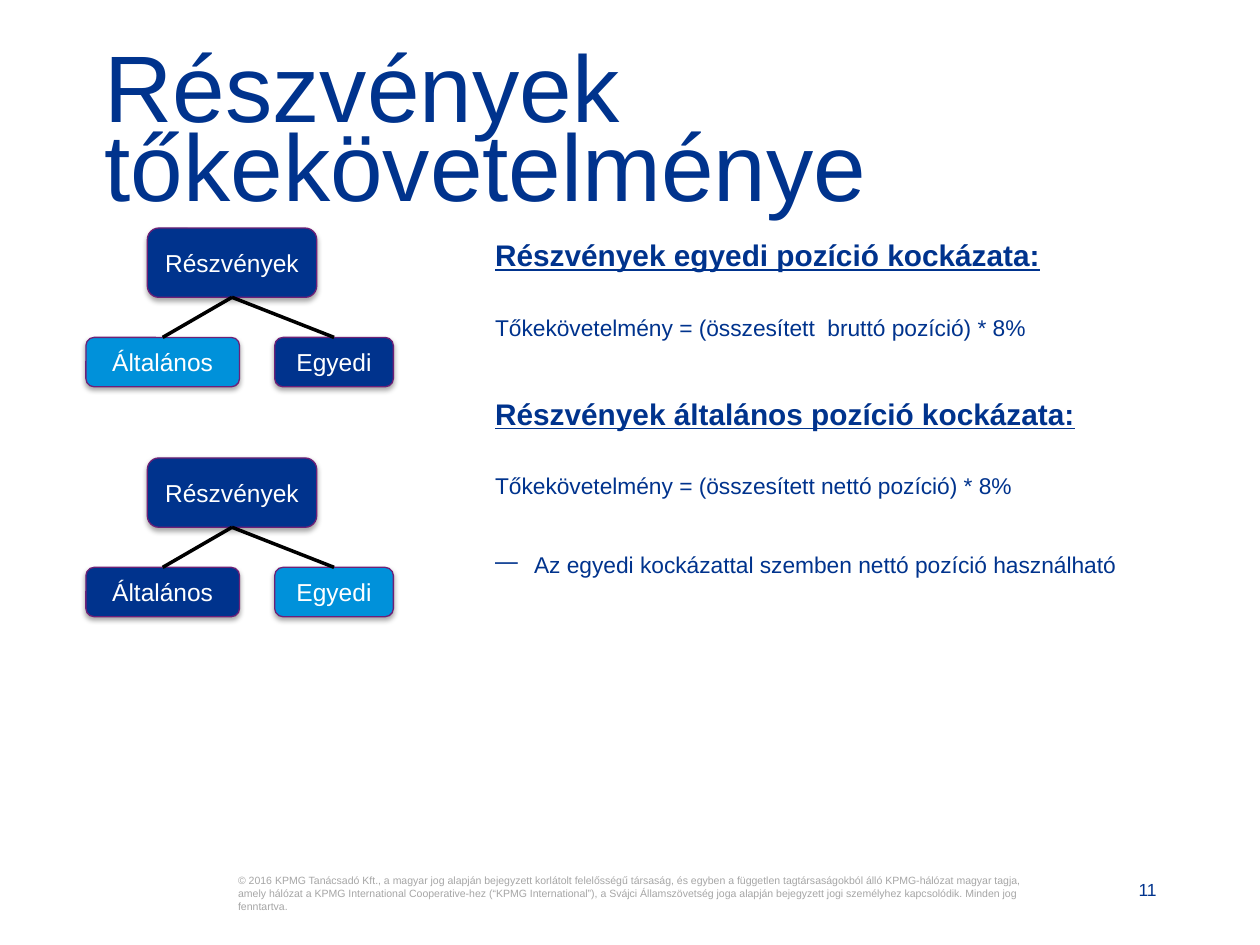
from lxml import etree
from pptx import Presentation
from pptx.dml.color import RGBColor
from pptx.enum.shapes import MSO_CONNECTOR, MSO_SHAPE
from pptx.enum.text import MSO_ANCHOR, PP_ALIGN
from pptx.oxml import parse_xml
from pptx.oxml.ns import nsdecls, qn
from pptx.util import Pt

NAVY = RGBColor(0x00, 0x33, 0x8D)
BLUE = RGBColor(0x00, 0x91, 0xDA)
PURPLE = RGBColor(0x6D, 0x20, 0x77)
GREY = RGBColor(0xA6, 0xA6, 0xA6)
BLACK = RGBColor(0, 0, 0)
WHITE = RGBColor(0xFF, 0xFF, 0xFF)

FONT = "Arial"
BULLET_INDENT = 22.3
TREE_TOP = 130.3
TREE_STEP = 131.4

COPYRIGHT = (
    "© 2016 KPMG Tanácsadó Kft., a magyar jog alapján bejegyzett korlátolt "
    "felelősségű társaság, és egyben a független tagtársaságokból álló "
    "KPMG-hálózat magyar tagja, amely hálózat a KPMG International "
    "Cooperative-hez (“KPMG International”), a Svájci Államszövetség joga "
    "alapján bejegyzett jogi személyhez kapcsolódik. Minden jog fenntartva."
)


def write(paragraph, text, size, color=NAVY, heading=False, align=PP_ALIGN.LEFT,
          before=0, spacing=None, bullet=None):
    """Fill a paragraph with text and format it."""
    if bullet:
        paragraph.level = 1
        properties = paragraph._p.get_or_add_pPr()
        properties.set("marL", str(Pt(BULLET_INDENT)))
        properties.set("indent", str(-Pt(BULLET_INDENT)))
        etree.SubElement(properties, qn("a:buChar")).set("char", bullet)
    paragraph.text = text
    paragraph.alignment = align
    paragraph.space_before = Pt(before)
    if spacing:
        paragraph.line_spacing = spacing
    font = paragraph.font
    font.name, font.size = FONT, Pt(size)
    font.bold = font.underline = heading
    font.color.rgb = color


def set_frame(frame, anchor=MSO_ANCHOR.TOP, inset=0):
    frame.word_wrap = True
    frame.vertical_anchor = anchor
    frame.margin_left = frame.margin_right = Pt(inset)
    frame.margin_top = frame.margin_bottom = Pt(inset / 2)


def add_text_box(slide, left, top, width, height, **frame_format):
    box = slide.shapes.add_textbox(Pt(left), Pt(top), Pt(width), Pt(height))
    set_frame(box.text_frame, **frame_format)
    return box.text_frame


def add_title(slide, text):
    title = slide.shapes.title
    title.left, title.top = Pt(59.8), Pt(33.8)
    title.width, title.height = Pt(601.2), Pt(45.4)
    set_frame(title.text_frame)
    write(title.text_frame.paragraphs[0], text, 54, spacing=0.7)


def add_node(slide, text, left, top, width, height, fill):
    """Rounded box with a soft shadow below it."""
    node = slide.shapes.add_shape(MSO_SHAPE.ROUNDED_RECTANGLE, Pt(left), Pt(top),
                                  Pt(width), Pt(height))
    node.fill.solid()
    node.fill.fore_color.rgb = fill
    node.line.color.rgb = PURPLE
    node.line.width = Pt(0.75)
    node.shadow.inherit = False
    effects = node._element.spPr.find(qn("a:effectLst"))
    effects.append(parse_xml(
        f'<a:outerShdw {nsdecls("a")} blurRad="{Pt(3.1)}" dist="{Pt(1.8)}" '
        'dir="5400000" rotWithShape="0"><a:srgbClr val="000000">'
        '<a:alpha val="35000"/></a:srgbClr></a:outerShdw>'))
    set_frame(node.text_frame, anchor=MSO_ANCHOR.MIDDLE, inset=7.2)
    write(node.text_frame.paragraphs[0], text, 14, WHITE, align=PP_ALIGN.CENTER)
    return node


def add_branch(slide, parent, child):
    branch = slide.shapes.add_connector(MSO_CONNECTOR.STRAIGHT, 0, 0, 0, 0)
    branch.begin_connect(parent, 2)
    branch.end_connect(child, 0)
    branch.line.color.rgb = BLACK
    branch.line.width = Pt(2)
    etree.SubElement(branch._element.spPr, qn("a:effectLst"))


def add_risk_tree(slide, top, general_fill, specific_fill):
    shares = add_node(slide, "Részvények", 84.2, top, 96.8, 39.6, NAVY)
    child_top = top + 62.5
    children = [
        add_node(slide, "Általános", 49.1, child_top, 87.8, 28.2, general_fill),
        add_node(slide, "Egyedi", 157, child_top, 67.8, 28.2, specific_fill),
    ]
    for child in children:
        add_branch(slide, shares, child)


def add_requirements(slide):
    frame = add_text_box(slide, 275.8, 132, 474.5, 385, inset=7.2)
    heading = dict(size=17, heading=True)
    lines = [
        ("Részvények egyedi pozíció kockázata:", heading),
        ("Tőkekövetelmény = (összesített  bruttó pozíció) * 8%",
         dict(size=13, before=23.3)),
        ("Részvények általános pozíció kockázata:", dict(heading, before=31)),
        ("Tőkekövetelmény = (összesített nettó pozíció) * 8%",
         dict(size=13, before=23.3)),
        ("Az egyedi kockázattal szemben nettó pozíció használható",
         dict(size=13, before=29.5, bullet="—")),
    ]
    for index, (text, text_format) in enumerate(lines):
        paragraph = frame.add_paragraph() if index else frame.paragraphs[0]
        write(paragraph, text, **text_format)


def add_footer(slide):
    number = add_text_box(slide, 566.6, 502.6, 94.3, 11.5, anchor=MSO_ANCHOR.BOTTOM)
    write(number.paragraphs[0], "11", 10, align=PP_ALIGN.RIGHT)
    notice = add_text_box(slide, 136.1, 499.7, 457.9, 20.2)
    write(notice.paragraphs[0], COPYRIGHT, 6, GREY)


def main():
    presentation = Presentation()
    presentation.slide_width, presentation.slide_height = Pt(720), Pt(540)
    slide = presentation.slides.add_slide(presentation.slide_layouts[5])

    # Footer and title
    add_footer(slide)
    add_title(slide, "Részvények tőkekövetelménye")

    # Capital requirements on the right
    add_requirements(slide)

    # Risk trees on the left, each highlighting one kind of risk
    add_risk_tree(slide, TREE_TOP, BLUE, NAVY)
    add_risk_tree(slide, TREE_TOP + TREE_STEP, NAVY, BLUE)

    presentation.save("out.pptx")


if __name__ == "__main__":
    main()
